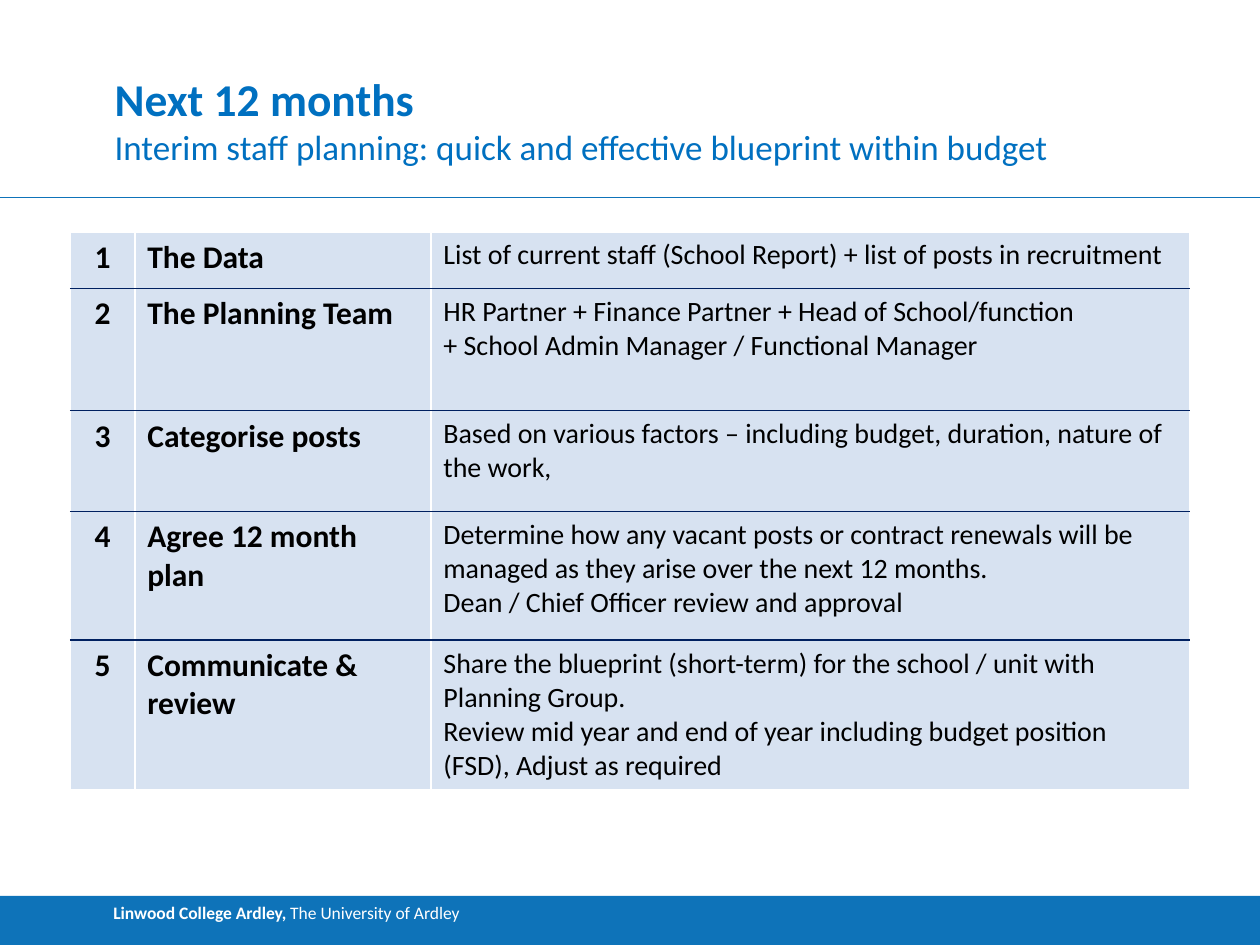
from lxml import etree
from pptx import Presentation
from pptx.dml.color import RGBColor
from pptx.enum.shapes import MSO_CONNECTOR, MSO_SHAPE
from pptx.enum.text import MSO_ANCHOR, PP_ALIGN
from pptx.oxml.ns import qn
from pptx.util import Inches, Pt

RECT, STRAIGHT = MSO_SHAPE.RECTANGLE, MSO_CONNECTOR.STRAIGHT
TOP, BOTTOM = MSO_ANCHOR.TOP, MSO_ANCHOR.BOTTOM
LEFT, CENTER = PP_ALIGN.LEFT, PP_ALIGN.CENTER
BLUE, TITLE_BLUE, NAVY = "0E73B9", "0070C0", "002060"
WHITE, BLACK, PALE = "FFFFFF", "000000", "D7E2F1"


def rgb(value):
    return RGBColor.from_string(value)


def add_run(p, text, size, color, bold=False):
    r = p.add_run()
    r.text = text
    for name, value in {"name": "Calibri", "size": Pt(size), "bold": bold}.items():
        setattr(r.font, name, value)
    r.font.color.rgb = rgb(color)


prs = Presentation()
prs.slide_width, prs.slide_height = Inches(10), Inches(7.5)
s = prs.slides.add_slide(prs.slide_layouts[6])

# Footer band
sp = s.shapes.add_shape(RECT, Inches(0), Inches(7.11), Inches(10), Inches(0.39))
sp.shadow.inherit = False
sp.fill.solid()
sp.fill.fore_color.rgb = rgb(BLUE)
sp.line.fill.background()
tf = sp.text_frame
tf.vertical_anchor = TOP
tf.margin_left = Inches(0.9)
p = tf.paragraphs[0]
p.alignment = LEFT
add_run(p, "Linwood College Ardley, ", 10, WHITE, True)
add_run(p, "The University of Ardley", 10, WHITE)

# Header rule
rule = s.shapes.add_connector(STRAIGHT, Inches(0), Inches(1.57), Inches(10), Inches(1.57))
rule.line.color.rgb = rgb(BLUE)
rule.line.width = Pt(0.75)
etree.SubElement(rule._element.spPr, qn("a:effectLst"))

# Title and subtitle
headings = [
    ("Next 12 months", 0.39, 0.61, 26, True, BOTTOM),
    ("Interim staff planning: quick and effective blueprint within budget",
     1, 0.3, 20, False, TOP),
]
for text, top, height, size, bold, anchor in headings:
    sp = s.shapes.add_textbox(Inches(0.91), Inches(top), Inches(8.2), Inches(height))
    tf = sp.text_frame
    for name, value in {"word_wrap": True, "vertical_anchor": anchor, "margin_left": 0,
                        "margin_top": 0, "margin_right": 0, "margin_bottom": 0}.items():
        setattr(tf, name, value)
    add_run(tf.paragraphs[0], text, size, TITLE_BLUE, bold)

# Planning steps: row height, step name, paragraphs of detail
steps = [
    (0.45, "The Data",
     ["List of current staff (School Report) + list of posts in recruitment"]),
    (0.97, "The Planning Team",
     ["HR Partner + Finance Partner + Head of School/function",
      "+ School Admin Manager / Functional Manager"]),
    (0.8, "Categorise posts",
     ["Based on various factors – including budget, duration, nature of the work,"]),
    (1.02, "Agree 12 month plan",
     ["Determine how any vacant posts or contract renewals will be managed "
      "as they arise over the next 12 months.",
      "Dean / Chief Officer review and approval"]),
    (1.19, "Communicate & review",
     ["Share the blueprint (short-term) for the school / unit with Planning Group.",
      "Review mid year and end of year including budget position (FSD), "
      "Adjust as required"]),
]
widths = [0.51, 2.35, 6.02]
frame = s.shapes.add_table(len(steps), len(widths), Inches(0.56), Inches(1.84),
                           Inches(sum(widths)), Inches(sum(step[0] for step in steps)))
table = frame.table
table.first_row = table.horz_banding = False
for column, width in zip(table.columns, widths):
    column.width = Inches(width)

for i, (height, name, details) in enumerate(steps):
    table.rows[i].height = Inches(height)
    borders = {
        "a:lnL": WHITE,
        "a:lnR": WHITE,
        "a:lnT": WHITE if i == 0 else NAVY,
        "a:lnB": WHITE if i == len(steps) - 1 else NAVY,
    }
    for j, lines in enumerate([[str(i + 1)], [name], details]):
        cell = table.cell(i, j)
        tf = cell.text_frame
        for k, text in enumerate(lines):
            p = tf.add_paragraph() if k else tf.paragraphs[0]
            p.alignment = CENTER if j == 0 else LEFT
            add_run(p, text, 16 if j == 2 else 18, BLACK, j < 2)
        # Borders come before the fill in the cell properties
        tc_pr = cell._tc.get_or_add_tcPr()
        for tag, color in borders.items():
            ln = etree.SubElement(tc_pr, qn(tag), w=str(Pt(1)))
            fill = etree.SubElement(ln, qn("a:solidFill"))
            etree.SubElement(fill, qn("a:srgbClr"), val=color)
        cell.fill.solid()
        cell.fill.fore_color.rgb = rgb(PALE)

prs.save("out.pptx")
